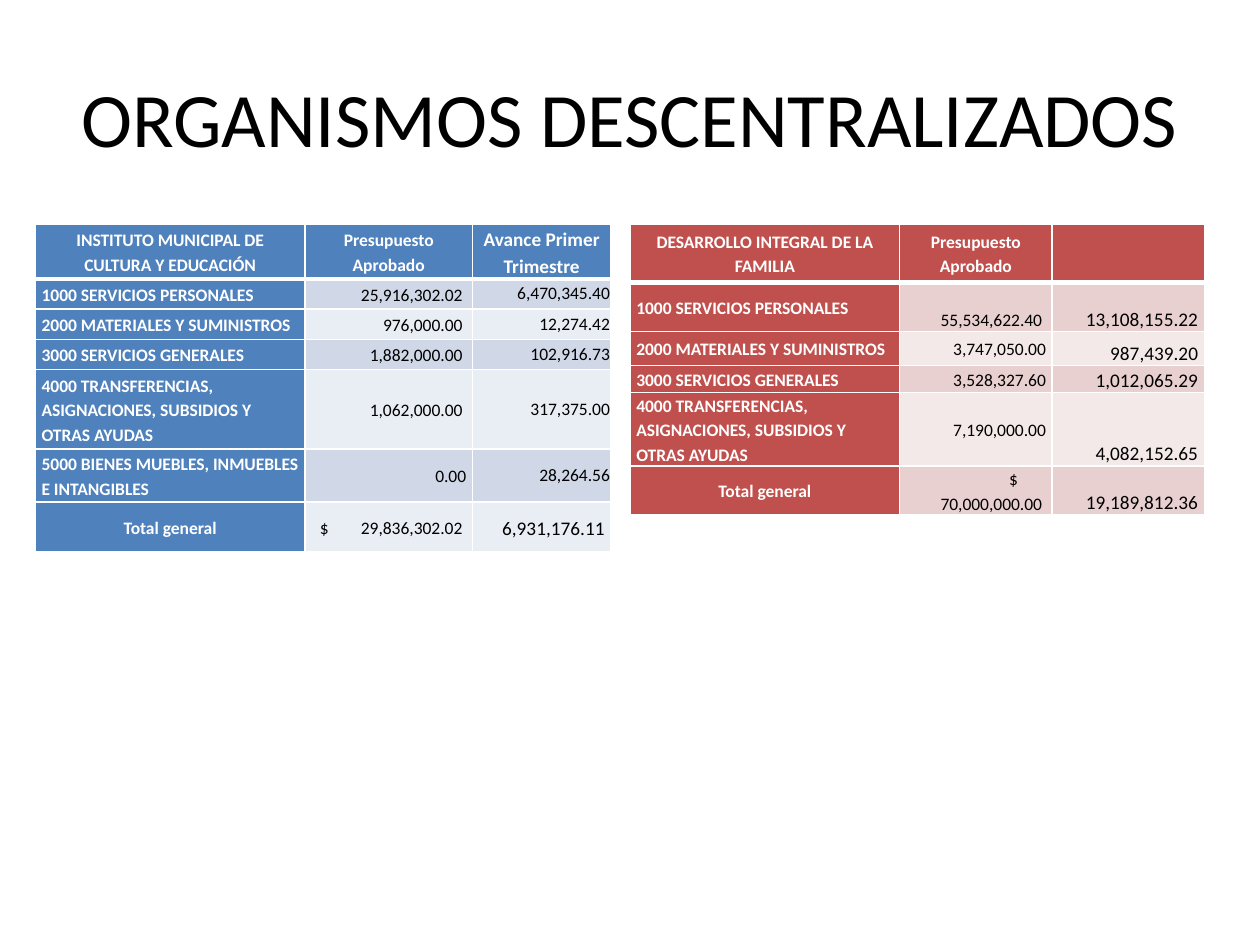
from dataclasses import dataclass

import pptx
import pptx.dml.color
import pptx.enum.text
import pptx.oxml
import pptx.oxml.ns
import pptx.util
from pptx.util import Inches

ALIGN = pptx.enum.text.PP_ALIGN
ANCHOR = pptx.enum.text.MSO_ANCHOR


@dataclass(frozen=True)
class Theme:
    font: str = "Calibri"
    title_size: int = 44
    body_size: int = 10
    large_size: int = 11
    black: str = "000000"
    white: str = "FFFFFF"
    line_spacing: float = 1.15
    thin: int = 1
    thick: int = 3


@dataclass(frozen=True)
class Amount:
    text: str
    right: float = 0.05
    anchor: ANCHOR = ANCHOR.MIDDLE
    size: int = Theme.body_size
    spacing: float = Theme.line_spacing
    left: float = 0.05
    tabs: tuple[float, ...] = ()


@dataclass(frozen=True)
class BudgetRow:
    label: str
    height: float
    approved: Amount
    progress: Amount


@dataclass(frozen=True)
class BudgetTable:
    left: float
    columns: tuple[float, ...]
    headings: tuple[str, ...]
    header_height: float
    rows: tuple[BudgetRow, ...]
    accent: str
    bands: tuple[str, str]


THEME = Theme()
TABLE_TOP = 1.78


def spaced(text: str, **options) -> Amount:
    return Amount(text, right=0.08, **options)


def flush(text: str) -> Amount:
    return Amount(text, right=0.01, left=0.01, spacing=1.0)


def low(text: str) -> Amount:
    return Amount(text, anchor=ANCHOR.BOTTOM, size=THEME.large_size)


PERSONAL = "1000 SERVICIOS PERSONALES"
MATERIALS = "2000 MATERIALES Y SUMINISTROS"
GENERAL = "3000 SERVICIOS GENERALES"
TRANSFERS = "4000 TRANSFERENCIAS, ASIGNACIONES, SUBSIDIOS Y OTRAS AYUDAS"
ASSETS = "5000 BIENES MUEBLES, INMUEBLES E INTANGIBLES"
TOTAL = "Total general"
APPROVED = "Presupuesto Aprobado"

FAMILY = BudgetTable(
    5, (2.14, 1.21, 1.21), ("DESARROLLO INTEGRAL DE LA FAMILIA", APPROVED, ""), 0.46,
    (
        BudgetRow(PERSONAL, 0.39, spaced("55,534,622.40", anchor=ANCHOR.BOTTOM), low("13,108,155.22")),
        BudgetRow(MATERIALS, 0.27, Amount("3,747,050.00"), low("987,439.20")),
        BudgetRow(GENERAL, 0.21, Amount("3,528,327.60"), low("1,012,065.29")),
        BudgetRow(TRANSFERS, 0.58, Amount("7,190,000.00"), low("4,082,152.65")),
        BudgetRow(TOTAL, 0.39, Amount("\t$\n\t70,000,000.00", tabs=(0.89, 1.08)), low("19,189,812.36")),
    ),
    "C0504D", ("E8D0D0", "F4E9E9"),
)
CULTURE = BudgetTable(
    0.28, (2.14, 1.33, 1.1),
    ("INSTITUTO MUNICIPAL DE CULTURA Y EDUCACIÓN", APPROVED, "Avance Primer Trimestre"), 0.43,
    (
        BudgetRow(PERSONAL, 0.24, spaced("25,916,302.02"), flush("6,470,345.40")),
        BudgetRow(MATERIALS, 0.24, spaced("976,000.00"), flush("12,274.42")),
        BudgetRow(GENERAL, 0.24, spaced("1,882,000.00"), flush("102,916.73")),
        BudgetRow(TRANSFERS, 0.63, spaced("1,062,000.00"), flush("317,375.00")),
        BudgetRow(ASSETS, 0.42, Amount("0.00"), flush("28,264.56")),
        BudgetRow(TOTAL, 0.4, Amount("$\t29,836,302.02", left=0.12, tabs=(1.13,)),
                  Amount("6,931,176.11", size=THEME.large_size)),
    ),
    "4F81BD", ("D0D8E8", "E9EDF4"),
)


def color(value: str) -> pptx.dml.color.RGBColor:
    return pptx.dml.color.RGBColor.from_string(value)


def add_borders(cell, top: int, bottom: int) -> None:
    properties = cell._tc.get_or_add_tcPr()
    widths = {"L": THEME.thin, "R": THEME.thin, "T": top, "B": bottom}
    for side, width in widths.items():
        properties.append(pptx.oxml.parse_xml(
            f'<a:ln{side} {pptx.oxml.ns.nsdecls("a")} w="{pptx.util.Pt(width)}">'
            f'<a:solidFill><a:srgbClr val="{THEME.white}"/></a:solidFill></a:ln{side}>'
        ))


def add_right_tab(para, position: float) -> None:
    para._p.get_or_add_pPr().append(pptx.oxml.parse_xml(
        f'<a:tabLst {pptx.oxml.ns.nsdecls("a")}>'
        f'<a:tab pos="{Inches(position)}" algn="r"/></a:tabLst>'
    ))


def write_text(frame, text: str, *, size: int, ink: str, bold: bool = False,
               align: ALIGN = ALIGN.LEFT, spacing: float | None = None,
               tabs: tuple[float, ...] = ()) -> None:
    frame.word_wrap = True
    frame.text = text
    for para in frame.paragraphs:
        para.alignment = align
        if spacing:
            para.line_spacing = spacing
        para.font.size = pptx.util.Pt(size)
        for span in para.runs:
            span.font.name = THEME.font
            span.font.size = pptx.util.Pt(size)
            span.font.bold = bold
            span.font.color.rgb = color(ink)
    for para, position in zip(frame.paragraphs, tabs):
        add_right_tab(para, position)


def format_cell(cell, fill: str, *, top: int, bottom: int, left: float = 0.05,
                right: float = 0.05, anchor: ANCHOR = ANCHOR.MIDDLE) -> None:
    add_borders(cell, top, bottom)
    cell.fill.solid()
    cell.fill.fore_color.rgb = color(fill)
    cell.margin_left, cell.margin_right = Inches(left), Inches(right)
    cell.margin_top = cell.margin_bottom = 0
    cell.vertical_anchor = anchor


def write_label(cell, text: str, fill: str, *, align: ALIGN, top: int, bottom: int,
                size: int = THEME.body_size) -> None:
    format_cell(cell, fill, top=top, bottom=bottom)
    write_text(cell.text_frame, text, size=size, ink=THEME.white, bold=True,
               align=align, spacing=THEME.line_spacing)


def write_amount(cell, amount: Amount, fill: str, *, top: int) -> None:
    format_cell(cell, fill, top=top, bottom=THEME.thin, left=amount.left,
                right=amount.right, anchor=amount.anchor)
    write_text(cell.text_frame, amount.text, size=amount.size, ink=THEME.black,
               align=ALIGN.LEFT if amount.tabs else ALIGN.RIGHT,
               spacing=amount.spacing, tabs=amount.tabs)


def draw_table(page, budget: BudgetTable) -> None:
    heights = [budget.header_height, *(row.height for row in budget.rows)]
    table = page.shapes.add_table(
        len(heights), len(budget.columns), Inches(budget.left), Inches(TABLE_TOP),
        Inches(sum(budget.columns)), Inches(sum(heights)),
    ).table
    for column, width in zip(table.columns, budget.columns):
        column.width = Inches(width)
    for line, height in zip(table.rows, heights):
        line.height = Inches(height)
    for index, heading in enumerate(budget.headings):
        write_label(table.cell(0, index), heading, budget.accent, align=ALIGN.CENTER,
                    top=THEME.thin, bottom=THEME.thick,
                    size=THEME.large_size if index == 2 else THEME.body_size)
    for index, row in enumerate(budget.rows, start=1):
        top = THEME.thick if index == 1 else THEME.thin
        write_label(table.cell(index, 0), row.label, budget.accent, top=top, bottom=THEME.thin,
                    align=ALIGN.CENTER if row.label == TOTAL else ALIGN.LEFT)
        for column, amount in enumerate((row.approved, row.progress), start=1):
            write_amount(table.cell(index, column), amount, budget.bands[(index - 1) % 2], top=top)


def main() -> None:
    deck = pptx.Presentation()
    deck.slide_width, deck.slide_height = Inches(10), Inches(7.5)
    page = deck.slides.add_slide(deck.slide_layouts[5])
    title = page.shapes.title
    title.left, title.top, title.width, title.height = map(Inches, (0.5, 0.3, 9, 1.25))
    title.text_frame.vertical_anchor = ANCHOR.MIDDLE
    write_text(title.text_frame, "ORGANISMOS DESCENTRALIZADOS", size=THEME.title_size,
               ink=THEME.black, align=ALIGN.CENTER)
    for budget in (FAMILY, CULTURE):
        draw_table(page, budget)
    deck.save("out.pptx")


if __name__ == "__main__":
    main()
